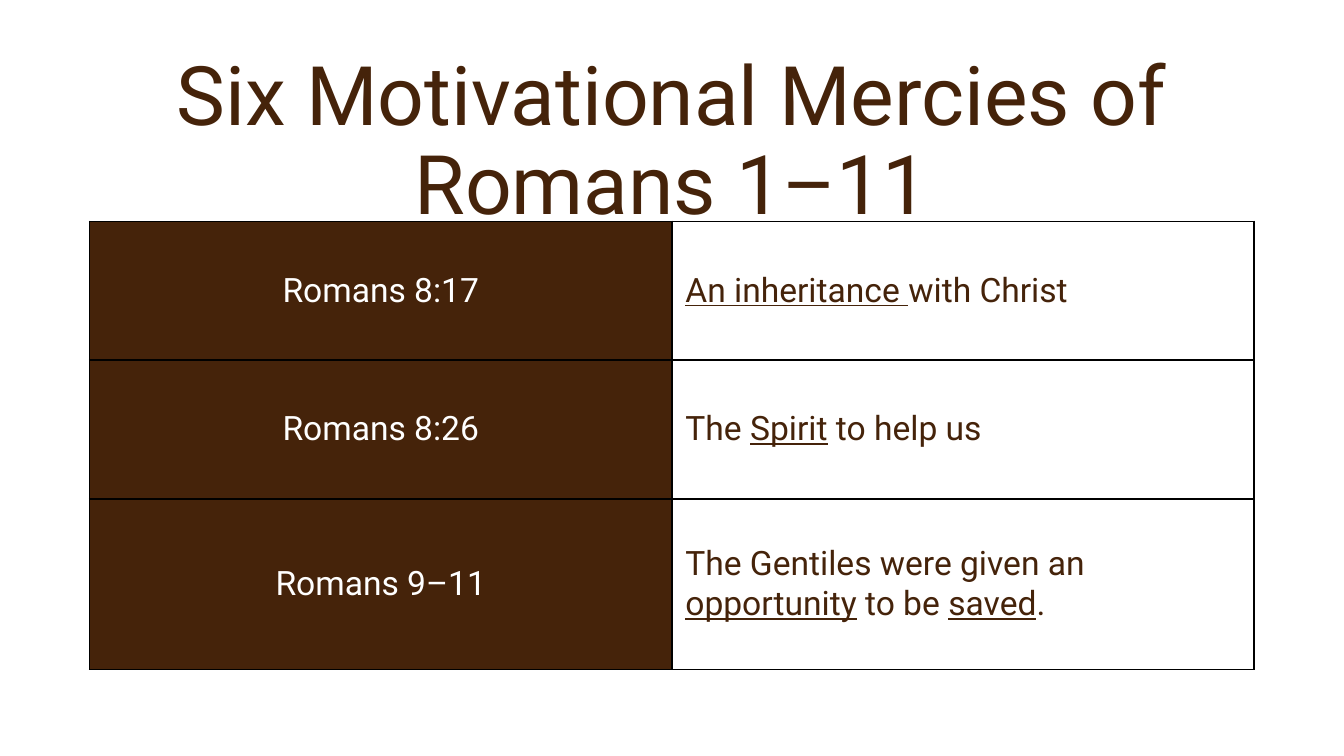
from typing import NamedTuple

from lxml import etree
from pptx import Presentation
from pptx.dml.color import RGBColor
from pptx.enum.text import MSO_ANCHOR, PP_ALIGN
from pptx.oxml.ns import qn
from pptx.util import Inches, Pt

CENTER, LEFT = PP_ALIGN.CENTER, PP_ALIGN.LEFT
MIDDLE = MSO_ANCHOR.MIDDLE
WIDTH = Inches(10)
HEIGHT = WIDTH * 9 // 16
BROWN, WHITE, BLACK = "45230A", "FFFFFF", "000000"
TABLE_LEFT, TABLE_TOP = 0.0667, 0.293
COLUMN_SHARE = 0.4333
ROW_SHARES = (0.1835, 0.1835, 0.2258)


class Run(NamedTuple):
    """A piece of text and whether it is underlined."""

    text: str
    underline: bool = False


class Mercy(NamedTuple):
    """A Bible reference and the mercy found there."""

    reference: str
    runs: tuple[Run, ...]


MERCIES = (
    Mercy("Romans 8:17", (Run("An inheritance ", True), Run("with Christ"))),
    Mercy("Romans 8:26", (Run("The "), Run("Spirit", True), Run(" to help us"))),
    Mercy("Romans 9–11", (
        Run("The Gentiles were given an "), Run("opportunity", True),
        Run(" to be "), Run("saved", True), Run("."))),
)


def color(value: str) -> RGBColor:
    """Turn a hex string into a colour."""
    return RGBColor.from_string(value)


def write(paragraph, runs: tuple[Run, ...], size: float, ink: str, alignment) -> None:
    """Fill a paragraph with formatted runs."""
    paragraph.alignment = alignment
    for piece in runs:
        run = paragraph.add_run()
        run.text = piece.text
        values = {"name": "Roboto", "size": Pt(size), "underline": piece.underline}
        for name, value in values.items():
            setattr(run.font, name, value)
        run.font.color.rgb = color(ink)


def add_borders(cell) -> None:
    """Draw a thin black line on each side of a cell."""
    properties = cell._tc.get_or_add_tcPr()
    for side in ("a:lnL", "a:lnR", "a:lnT", "a:lnB"):
        line = etree.SubElement(properties, qn(side), w=str(Pt(1)))
        fill = etree.SubElement(line, qn("a:solidFill"))
        etree.SubElement(fill, qn("a:srgbClr"), val=BLACK)


def fill_cell(cell, runs: tuple[Run, ...], background: str | None, ink: str, alignment) -> None:
    """Set the text, borders and fill of a cell."""
    cell.vertical_anchor = MIDDLE
    write(cell.text_frame.paragraphs[0], runs, 18, ink, alignment)
    add_borders(cell)
    if background is None:
        cell.fill.background()
    else:
        cell.fill.solid()
        cell.fill.fore_color.rgb = color(background)


def add_title(slide, text: str) -> None:
    """Add the centred slide title."""
    shape = slide.shapes.add_textbox(
        int(WIDTH * 0.05), int(HEIGHT * 0.0857), int(WIDTH * 0.9), int(HEIGHT * 0.208))
    frame = shape.text_frame
    frame.word_wrap = True
    frame.vertical_anchor = MIDDLE
    frame.paragraphs[0].line_spacing = 0.9
    write(frame.paragraphs[0], (Run(text),), 44, BROWN, CENTER)


def add_mercies(slide) -> None:
    """Add the table of references and mercies."""
    table = slide.shapes.add_table(
        len(MERCIES), 2, int(WIDTH * TABLE_LEFT), int(HEIGHT * TABLE_TOP),
        int(WIDTH * COLUMN_SHARE * 2), int(HEIGHT * sum(ROW_SHARES))).table
    table.first_row = table.horz_banding = False
    for index, (mercy, share) in enumerate(zip(MERCIES, ROW_SHARES)):
        table.rows[index].height = int(HEIGHT * share)
        fill_cell(table.cell(index, 0), (Run(mercy.reference),), BROWN, WHITE, CENTER)
        fill_cell(table.cell(index, 1), mercy.runs, None, BROWN, LEFT)


def main() -> None:
    """Build and save the presentation."""
    presentation = Presentation()
    presentation.slide_width, presentation.slide_height = WIDTH, HEIGHT
    slide = presentation.slides.add_slide(presentation.slide_layouts[6])
    add_title(slide, "Six Motivational Mercies of Romans 1–11")
    add_mercies(slide)
    presentation.save("out.pptx")


if __name__ == "__main__":
    main()
